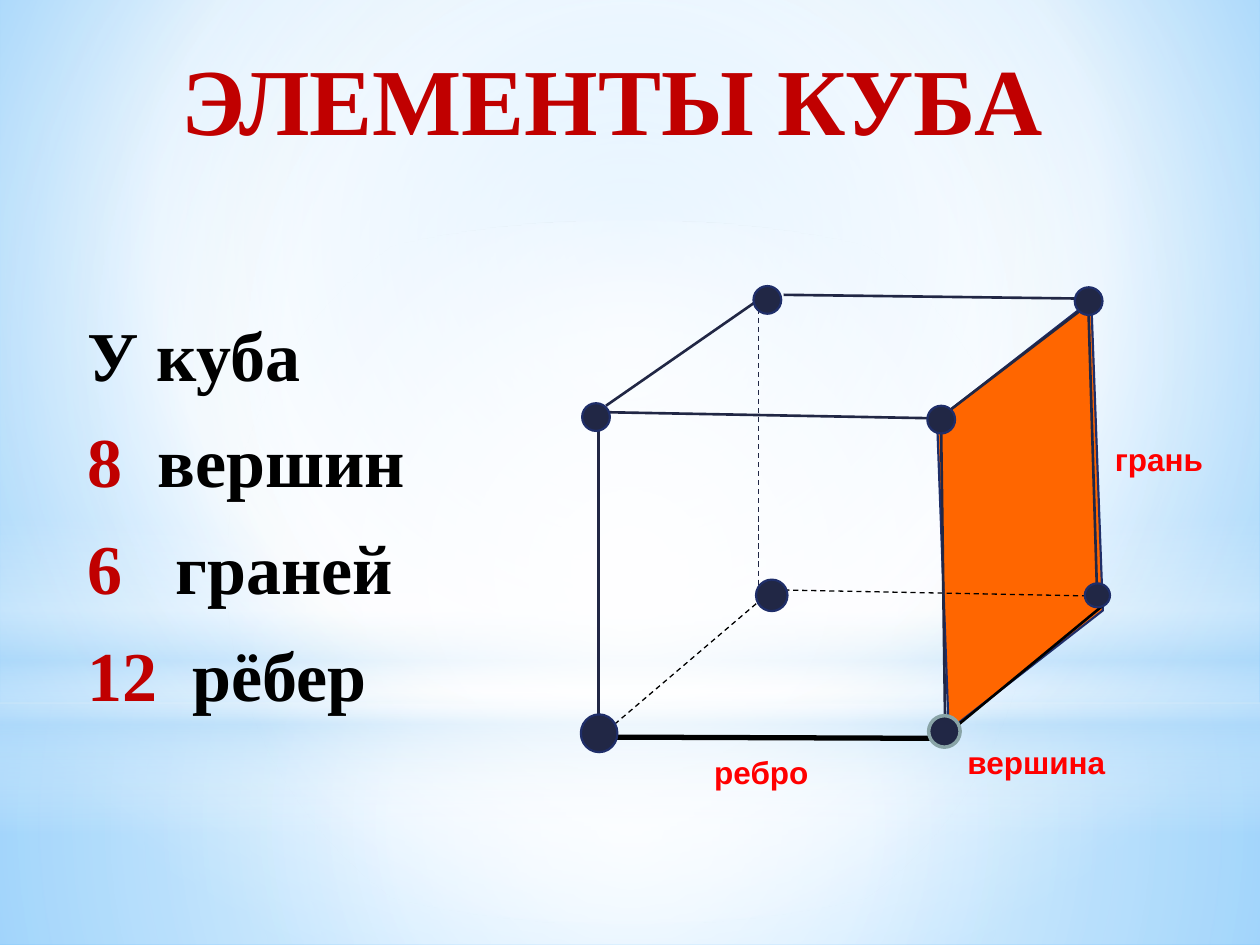
"""Builds a slide that names the elements of a cube."""
from lxml import etree
from pptx import Presentation
from pptx.dml.color import RGBColor
from pptx.enum.dml import MSO_LINE
from pptx.enum.shapes import MSO_CONNECTOR, MSO_SHAPE
from pptx.enum.text import MSO_ANCHOR, PP_ALIGN
from pptx.oxml.ns import qn
from pptx.util import Inches, Pt

RECTANGLE, ELLIPSE = MSO_SHAPE.RECTANGLE, MSO_SHAPE.OVAL
PARALLELOGRAM, STRAIGHT = MSO_SHAPE.PARALLELOGRAM, MSO_CONNECTOR.STRAIGHT
DASH, CENTER = MSO_LINE.DASH, PP_ALIGN.CENTER
TOP, MIDDLE = MSO_ANCHOR.TOP, MSO_ANCHOR.MIDDLE

COLORS = {
    "white": "FFFFFF", "haze": "B4DCFA", "sky": "9ED5FF", "deep": "5BB9FF",
    "crimson": "C00000", "red": "FF0000", "black": "000000", "orange": "FF6600",
    "navy": "212745", "outline": "1F2E69", "gray": "89A4A7",
}
MIDPOINT = (50, 50, 50, 50)
BACKGROUND = ([(0, "sky", 100), (60, "white", 100), (100, "deep", 100)], (20, 10, 20, 60))
GLOWS = [
    (RECTANGLE, (0, 5.58, 10, 1.92),
     [(0, "white", 91), (37, "white", 76), (100, "haze", 79)], MIDPOINT),
    (RECTANGLE, (0, 0, 10, 5.58),
     [(0, "white", 89), (48, "white", 62), (100, "haze", 79)], MIDPOINT),
    (RECTANGLE, (0, 4.12, 10, 2.5),
     [(0, "white", 0), (29, "white", 30), (45, "haze", 40),
      (55, "white", 26), (65, "haze", 60), (100, "white", 0)], None),
    (ELLIPSE, (0, 1.75, 10, 5.58), [(0, "white", 100), (56, "white", 0)], MIDPOINT),
]

TITLE = [[("ЭЛЕМЕНТЫ КУБА", "crimson")]]
FACTS = [
    [("У куба", "black")],
    [("8 ", "crimson"), (" вершин", "black")],
    [("6   ", "crimson"), ("граней", "black")],
    [("12  ", "crimson"), ("рёбер", "black")],
]
LABELS = [
    ("грань", (8.75, 3.44, 0.94, 0.4)),
    ("вершина", (7.58, 5.85, 1.65, 0.4)),
    ("ребро", (5.57, 5.93, 1.02, 0.4)),
]
SERIF, SANS = "Times New Roman", "Arial"

FACE = (6.6, 3.09, 2.99, 2)
EDGES = [
    ((4.84, 5.85), (7.45, 5.86), "black", 3, None),
    ((4.77, 5.84), (6.05, 4.75), "black", 0.75, DASH),
    ((7.45, 5.88), (8.76, 4.8), "black", 1.5, None),
    ((6.08, 4.68), (8.66, 4.73), "black", 0.75, DASH),
    ((4.75, 5.67), (4.75, 3.27), "navy", 1.5, None),
    ((7.5, 5.68), (7.47, 3.44), "navy", 1.5, None),
    ((4.71, 3.27), (7.41, 3.32), "navy", 1.5, None),
    ((4.81, 3.22), (6.02, 2.38), "navy", 1.5, None),
    ((7.48, 3.3), (8.62, 2.43), "navy", 1.5, None),
    ((6.22, 2.34), (8.59, 2.37), "navy", 1.5, None),
    ((8.64, 2.5), (8.71, 4.81), "navy", 1.5, None),
    ((6.02, 2.45), (6.02, 4.8), "navy", 0.75, DASH),
]
VERTICES = [
    ((6, 4.6, 0.25, 0.25), "outline", 1.25),
    ((8.61, 4.63, 0.2, 0.19), "outline", 1.25),
    ((8.53, 2.28, 0.22, 0.22), "outline", 1.25),
    ((7.36, 3.22, 0.22, 0.22), "outline", 1.25),
    ((4.62, 3.2, 0.22, 0.22), "outline", 1.25),
    ((4.61, 5.67, 0.29, 0.3), "outline", 1.25),
    ((7.37, 5.68, 0.25, 0.25), "gray", 2),
    ((5.98, 2.27, 0.22, 0.22), "outline", 1.25),
]


def color(name):
    return RGBColor.from_string(COLORS[name])


def fill_gradient(fill, element, stops, focus):
    fill.gradient()
    gradient = element.find(".//" + qn("a:gradFill"))
    for child in list(gradient):
        gradient.remove(child)
    stop_list = etree.SubElement(gradient, qn("a:gsLst"))
    for position, name, opacity in stops:
        stop = etree.SubElement(stop_list, qn("a:gs"), pos=str(position * 1000))
        shade = etree.SubElement(stop, qn("a:srgbClr"), val=COLORS[name])
        if opacity < 100:
            etree.SubElement(shade, qn("a:alpha"), val=str(opacity * 1000))
    if focus:
        radial = etree.SubElement(gradient, qn("a:path"), {"path": "circle"})
        sides = {side: str(value * 1000) for side, value in zip("ltrb", focus)}
        etree.SubElement(radial, qn("a:fillToRect"), sides)
    else:
        etree.SubElement(gradient, qn("a:lin"), ang="5400000", scaled="0")


def add_shape(page, kind, bounds):
    shape = page.shapes.add_shape(kind, *map(Inches, bounds))
    shape.shadow.inherit = False
    return shape


def add_solid(page, kind, bounds, fill, line, width):
    shape = add_shape(page, kind, bounds)
    shape.fill.solid()
    shape.fill.fore_color.rgb = color(fill)
    shape.line.color.rgb = color(line)
    shape.line.width = Pt(width)
    return shape


def add_edge(page, start, end, name, width, dash):
    edge = page.shapes.add_connector(STRAIGHT, *map(Inches, start + end))
    edge.line.color.rgb = color(name)
    edge.line.width = Pt(width)
    if dash:
        edge.line.dash_style = dash
    etree.SubElement(edge.element.spPr, qn("a:effectLst"))


def add_text(page, bounds, lines, font, size, anchor=TOP, indent=0, **layout):
    box = page.shapes.add_textbox(*map(Inches, bounds))
    frame = box.text_frame
    frame.word_wrap = True
    frame.vertical_anchor = anchor
    for index, spans in enumerate(lines):
        para = frame.add_paragraph() if index else frame.paragraphs[0]
        for key, value in layout.items():
            setattr(para, key, value)
        if indent:
            para._p.get_or_add_pPr().set("marL", str(Inches(indent)))
        for text, name in spans:
            span = para.add_run()
            span.text = text
            span.font.color.rgb = color(name)
            for key, value in {"name": font, "size": Pt(size), "bold": True}.items():
                setattr(span.font, key, value)


def main():
    deck = Presentation()
    deck.slide_width, deck.slide_height = Inches(10), Inches(7.5)
    page = deck.slides.add_slide(deck.slide_layouts[6])
    fill_gradient(page.background.fill, page.element, *BACKGROUND)
    for kind, bounds, stops, focus in GLOWS:
        glow = add_shape(page, kind, bounds)
        glow.line.fill.background()
        fill_gradient(glow.fill, glow.element, stops, focus)

    add_text(page, (1.3, 0.21, 7.12, 1.25), TITLE, SERIF, 54, MIDDLE,
             alignment=CENTER, line_spacing=0.9)
    add_text(page, (0.55, 2.42, 3.83, 3.52), FACTS, SERIF, 40, indent=0.05,
             space_before=Pt(10), space_after=Pt(3))

    face = add_solid(page, PARALLELOGRAM, FACE, "orange", "outline", 1.25)
    face.adjustments[0] = 0.72
    face.rotation = 322.1
    for edge in EDGES:
        add_edge(page, *edge)
    for bounds, line, width in VERTICES:
        add_solid(page, ELLIPSE, bounds, "navy", line, width)
    for text, bounds in LABELS:
        add_text(page, bounds, [[(text, "red")]], SANS, 18)
    deck.save("out.pptx")


if __name__ == "__main__":
    main()
